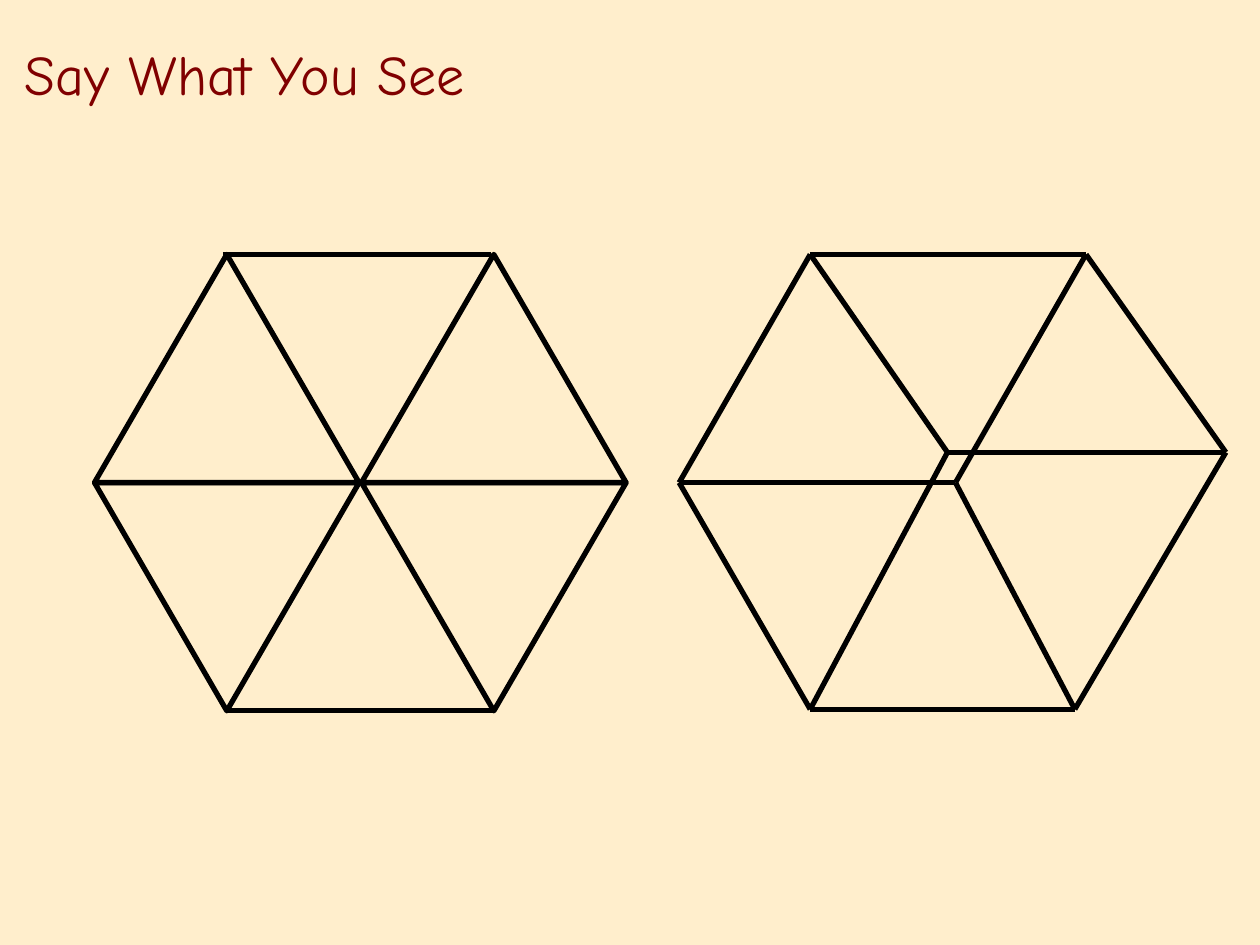
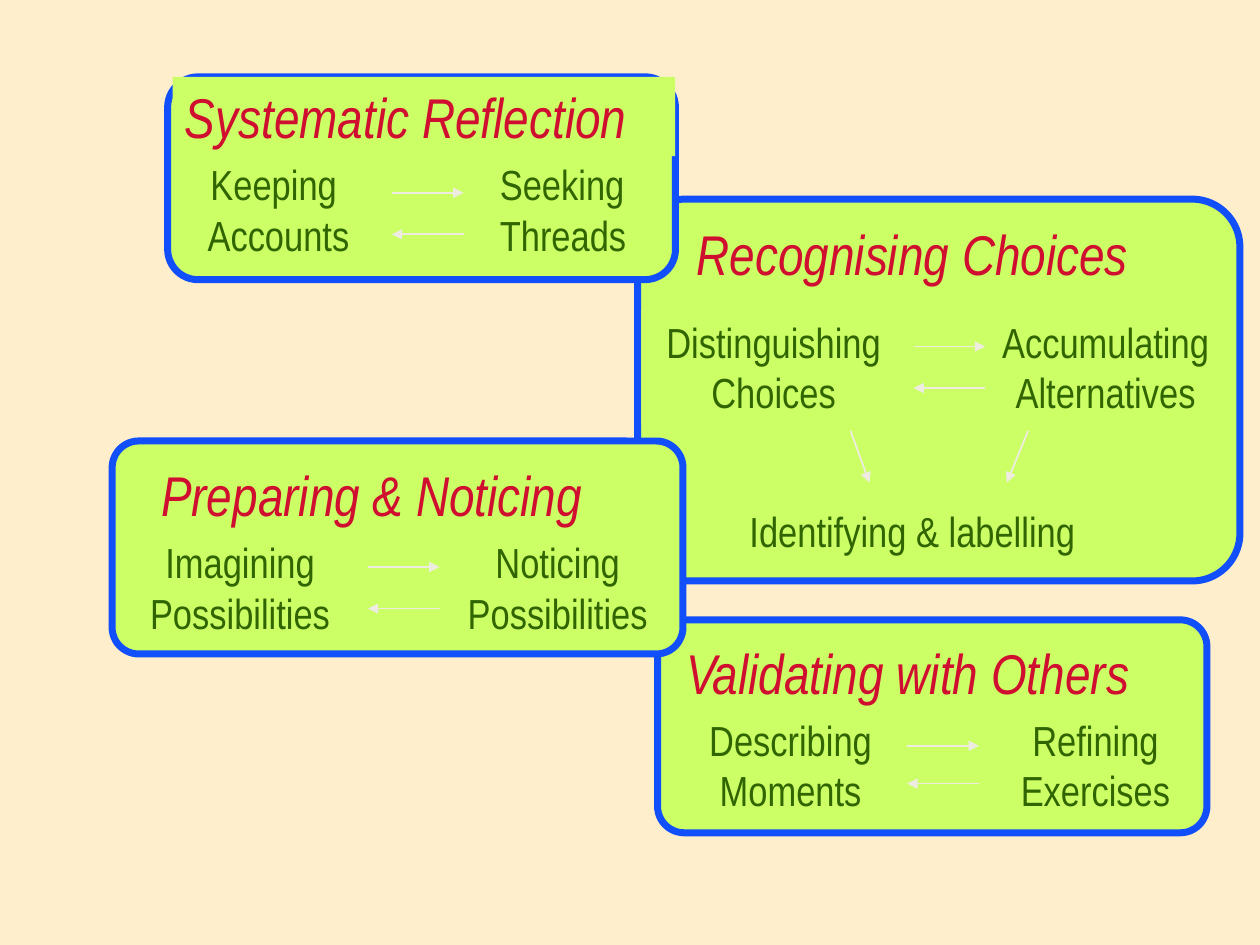
from dataclasses import dataclass

from lxml import etree
from pptx import Presentation
from pptx.dml.color import RGBColor
from pptx.enum.shapes import MSO_CONNECTOR, MSO_SHAPE
from pptx.enum.text import MSO_ANCHOR, MSO_AUTO_SIZE, PP_ALIGN
from pptx.oxml.ns import qn
from pptx.util import Pt

STRAIGHT = MSO_CONNECTOR.STRAIGHT
TRIANGLE = MSO_SHAPE.ISOSCELES_TRIANGLE
ROUNDED = MSO_SHAPE.ROUNDED_RECTANGLE
MIDDLE, TOP = MSO_ANCHOR.MIDDLE, MSO_ANCHOR.TOP
LEFT, CENTER = PP_ALIGN.LEFT, PP_ALIGN.CENTER
GROW = MSO_AUTO_SIZE.SHAPE_TO_FIT_TEXT


@dataclass(frozen=True)
class TextStyle:
    font: str
    size: int
    color: str
    italic: bool = False


@dataclass(frozen=True)
class Theme:
    background: str = "FFEECC"
    ink: str = "000000"
    panel_fill: str = "CCFF66"
    panel_line: str = "114FFB"
    arrow: str = "EEECE1"
    ink_width: float = 3
    panel_width: float = 4
    arrow_width: float = 1
    title: TextStyle = TextStyle("Comic Neue", 32, "800000")
    heading: TextStyle = TextStyle("Arial Narrow", 32, "CF0E30", True)
    body: TextStyle = TextStyle("Arial Narrow", 24, "316501")


THEME = Theme()
HEADING_H, COLUMN_H, LABEL_H = 45.4, 64.8, 36
ARROW_LENGTH = 41

# Heading: left, top, width. Columns: left, width, lines, alignment.
# Arrows: left, y of the rightward one, y of the leftward one.
RECOGNISING = dict(
    box=(364.3, 113.8, 344.2, 218.2), corner=0.125,
    heading=("Recognising Choices", 391, 121.7, 280.8), column_top=177.1,
    columns=[(366.5, 151.2, ["Distinguishing", "Choices"], CENTER),
             (559.4, 144.7, ["Accumulating", "Alternatives"], CENTER)],
    arrows=(522, 198, 221.8))
VALIDATING = dict(
    box=(375.8, 354.2, 313.9, 121.7), corner=0.125,
    heading=("Validating with Others", 385.2, 361.4, 291.6), column_top=404.6,
    columns=[(393.8, 115.9, ["Describing", "Moments"], CENTER),
             (573.1, 105.8, ["Refining", "Exercises"], CENTER)],
    arrows=(518.4, 426.2, 447.8))
SYSTEMATIC = dict(
    box=(95.8, 43.9, 290.2, 115.9), corner=0.15,
    heading=("Systematic Reflection", 98.6, 43.9, 287.3), column_top=87.1,
    columns=[(107.3, 103.7, ["Keeping ", "Accounts"], CENTER),
             (278.6, 90.7, ["Seeking", "Threads"], LEFT)],
    arrows=(223.9, 110.2, 133.9))
PREPARING = dict(
    box=(64.1, 252, 326.2, 121.7), corner=0.125,
    heading=("Preparing & Noticing", 85, 259.9, 275), column_top=303.1,
    columns=[(72.7, 128.9, ["Imagining", "Possibilities"], CENTER),
             (254.2, 128.9, ["Noticing", "Possibilities"], CENTER)],
    arrows=(210.2, 324, 347.8))


# Basic elements
def rgb(color):
    return RGBColor.from_string(color)


def points(values):
    return [Pt(v) for v in values]


def add_line(shapes, start, end, color=THEME.ink, width=THEME.ink_width, arrow=False):
    line = shapes.add_connector(STRAIGHT, *points((*start, *end)))
    line.line.color.rgb = rgb(color)
    line.line.width = Pt(width)
    if arrow:
        ln = line.line._get_or_add_ln()
        etree.SubElement(ln, qn("a:tailEnd"), type="triangle")
    etree.SubElement(line._element.spPr, qn("a:effectLst"))


def add_arrow(shapes, start, end):
    add_line(shapes, start, end, THEME.arrow, THEME.arrow_width, arrow=True)


def add_outline(shapes, kind, box, color, width, fill=None):
    sp = shapes.add_shape(kind, *points(box))
    sp.shadow.inherit = False
    sp.line.color.rgb = rgb(color)
    sp.line.width = Pt(width)
    if fill:
        sp.fill.solid()
        sp.fill.fore_color.rgb = rgb(fill)
    else:
        sp.fill.background()
    return sp


def add_text(shapes, box, lines, style, align=LEFT, anchor=TOP):
    sp = shapes.add_textbox(*points(box))
    tf = sp.text_frame
    tf.vertical_anchor = anchor
    for i, text in enumerate(lines):
        p = tf.add_paragraph() if i else tf.paragraphs[0]
        p.alignment = align
        r = p.add_run()
        r.text = text
        r.font.name = style.font
        r.font.size = Pt(style.size)
        r.font.italic = style.italic
        r.font.color.rgb = rgb(style.color)
    return sp


def add_title(shapes, text):
    sp = add_text(shapes, (7.2, 8.6, 530.6, 66.2), [text], THEME.title, anchor=MIDDLE)
    sp.text_frame.word_wrap = True


def add_label(shapes, box, lines, style, align=LEFT):
    sp = add_text(shapes, box, lines, style, align)
    sp.text_frame.word_wrap = False
    sp.text_frame.auto_size = GROW
    sp.fill.solid()
    sp.fill.fore_color.rgb = rgb(THEME.panel_fill)


# Hexagons
def add_triangle_hexagon(shapes):
    left, top, width, height, pitch = 54, 145.4, 151.2, 130.4, 152.6
    for row in range(2):
        for col in range(2):
            box = (left + col * pitch, top + row * height, width, height)
            sp = add_outline(shapes, TRIANGLE, box, THEME.ink, THEME.ink_width)
            sp.rotation = 180 * row
    bottom = top + 2 * height
    add_line(shapes, (127.4, top), (280.8, top))
    add_line(shapes, (129.6, bottom), (282.2, bottom))


def add_skewed_hexagon(shapes):
    top_left, top_right = (463, 145.4), (620.6, 145.4)
    left, right = (388.1, 275.8), (700.5, 258.5)
    bottom_left, bottom_right = (463, 405.3), (614.2, 405.3)
    upper_hub, lower_hub = (541.4, 258.5), (546, 275.8)
    rim = [top_left, top_right, right, bottom_right, bottom_left, left]
    for start, end in zip(rim, rim[1:] + rim[:1]):
        add_line(shapes, start, end)
    for hub, corners in ((upper_hub, (top_left, right, bottom_left)),
                         (lower_hub, (top_right, bottom_right, left))):
        for corner in corners:
            add_line(shapes, hub, corner)


# Panel with a heading and two columns joined by arrows
def add_panel(shapes, box, corner, heading, column_top, columns, arrows):
    sp = add_outline(shapes, ROUNDED, box, THEME.panel_line,
                     THEME.panel_width, THEME.panel_fill)
    sp.adjustments[0] = corner
    text, *place = heading
    add_label(shapes, (*place, HEADING_H), [text], THEME.heading)
    for left, width, lines, align in columns:
        add_label(shapes, (left, column_top, width, COLUMN_H), lines, THEME.body, align)
    x, y_out, y_back = arrows
    add_arrow(shapes, (x, y_out), (x + ARROW_LENGTH, y_out))
    add_arrow(shapes, (x + ARROW_LENGTH, y_back), (x, y_back))


# Slides
def add_slide(prs):
    return prs.slides.add_slide(prs.slide_layouts[6]).shapes


def build_hexagons(prs):
    shapes = add_slide(prs)
    add_title(shapes, "Say What You See")
    add_triangle_hexagon(shapes.add_group_shape().shapes)
    add_skewed_hexagon(shapes.add_group_shape().shapes)


def build_panels(prs):
    shapes = add_slide(prs)
    add_panel(shapes, **RECOGNISING)
    add_label(shapes, (421.2, 285.1, 218.9, LABEL_H),
              ["Identifying & labelling"], THEME.body)
    add_arrow(shapes, (486, 246.2), (496.8, 275.8))
    add_arrow(shapes, (587.5, 246.2), (575.3, 275.8))
    for panel in (VALIDATING, SYSTEMATIC, PREPARING):
        add_panel(shapes, **panel)


def main():
    prs = Presentation()
    prs.slide_width, prs.slide_height = Pt(720), Pt(540)
    background = prs.slide_master.background.fill
    background.solid()
    background.fore_color.rgb = rgb(THEME.background)
    build_hexagons(prs)
    build_panels(prs)
    prs.save("out.pptx")


if __name__ == "__main__":
    main()
